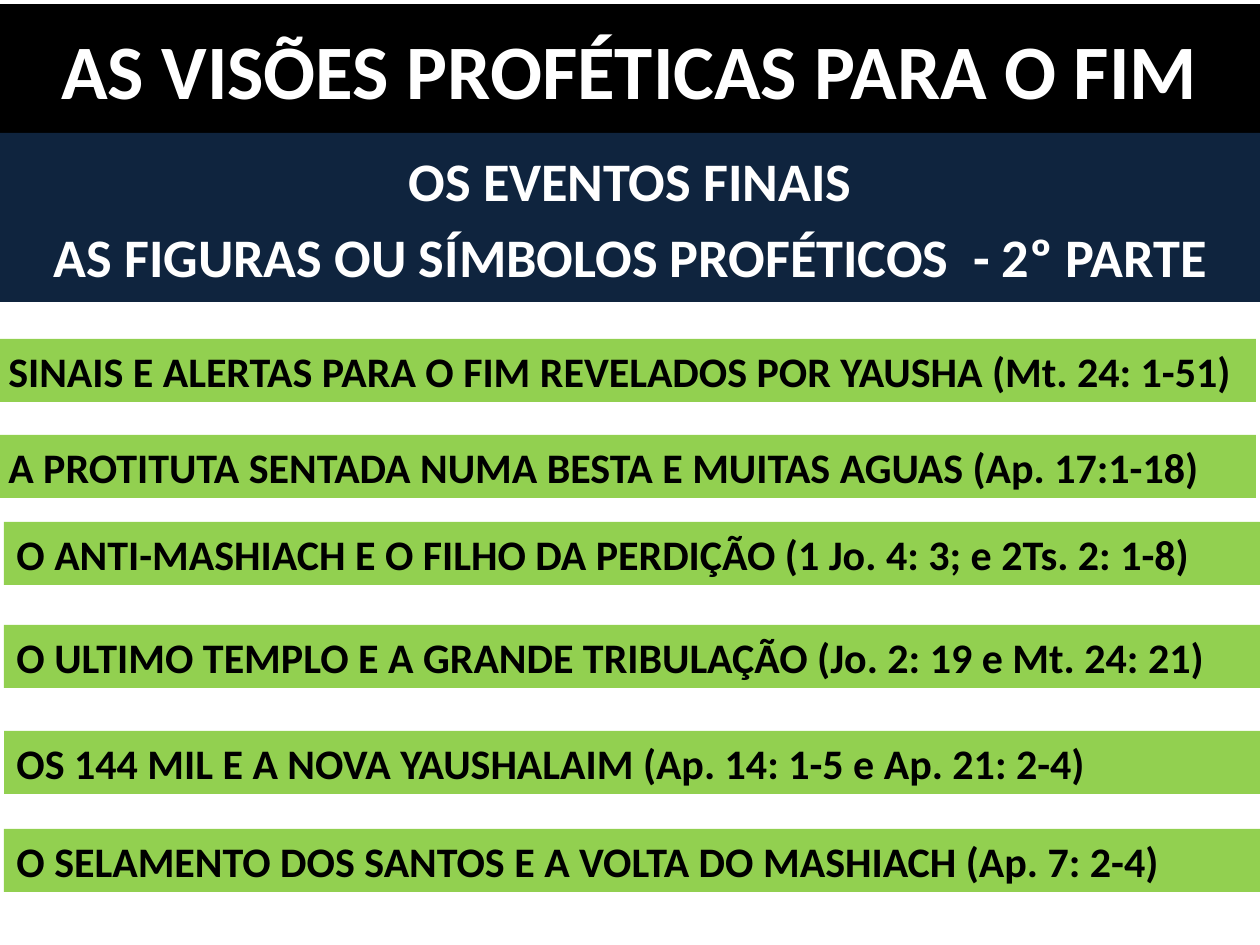
from dataclasses import dataclass

from pptx import Presentation
from pptx import util as u
from pptx.dml.color import RGBColor
from pptx.enum import shapes, text

PX_PER_INCH = 126
FONT = "Calibri"
BLACK = RGBColor(0x00, 0x00, 0x00)
WHITE = RGBColor(0xFF, 0xFF, 0xFF)
NAVY = RGBColor(0x0F, 0x24, 0x3E)
GREEN = RGBColor(0x92, 0xD0, 0x50)

TOPIC_HEIGHT = 63


@dataclass(frozen=True)
class Topic:
    wording: str
    left: int
    top: int
    width: int = 1260
    align: text.PP_ALIGN = text.PP_ALIGN.JUSTIFY


TOPICS = [
    Topic("SINAIS E ALERTAS PARA O FIM REVELADOS POR YAUSHA (Mt. 24: 1-51)",
          -4, 339, align=text.PP_ALIGN.LEFT),
    Topic("A PROTITUTA SENTADA NUMA BESTA E MUITAS AGUAS (Ap. 17:1-18)", -4, 435),
    Topic("O ANTI-MASHIACH E O FILHO DA PERDIÇÃO (1 Jo. 4: 3; e 2Ts. 2: 1-8)", 4, 522),
    Topic("O ULTIMO TEMPLO E A GRANDE TRIBULAÇÃO (Jo. 2: 19 e Mt. 24: 21)", 4, 625),
    Topic("OS 144 MIL E A NOVA YAUSHALAIM (Ap. 14: 1-5 e Ap. 21: 2-4)", 4, 731, 1268),
    Topic("O SELAMENTO DOS SANTOS E A VOLTA DO MASHIACH (Ap. 7: 2-4)", 4, 829, 1261),
]


def px(length: int) -> u.Emu:
    return u.Emu(round(length * u.Inches(1) / PX_PER_INCH))


def place(shape, left: int, top: int, width: int, height: int) -> None:
    shape.left, shape.top = px(left), px(top)
    shape.width, shape.height = px(width), px(height)


def paint(shape, color: RGBColor) -> None:
    shape.fill.solid()
    shape.fill.fore_color.rgb = color


def add_band(slide, left: int, top: int, width: int, height: int, color: RGBColor):
    band = slide.shapes.add_shape(
        shapes.MSO_SHAPE.RECTANGLE, px(left), px(top), px(width), px(height))
    paint(band, color)
    band.line.fill.background()
    band.shadow.inherit = False
    return band


def write(shape, lines: list[str], size: int, color: RGBColor,
          align: text.PP_ALIGN, anchor: text.MSO_ANCHOR,
          fit: text.MSO_AUTO_SIZE = text.MSO_AUTO_SIZE.NONE,
          space_before: int = 0) -> None:
    frame = shape.text_frame
    frame.word_wrap = True
    frame.auto_size = fit
    frame.vertical_anchor = anchor
    for index, line in enumerate(lines):
        paragraph = frame.add_paragraph() if index else frame.paragraphs[0]
        paragraph.alignment = align
        paragraph.space_before = u.Pt(space_before)
        run = paragraph.add_run()
        run.text = line
        run.font.name = FONT
        run.font.size = u.Pt(size)
        run.font.bold = True
        run.font.color.rgb = color


def add_topic(slide, topic: Topic) -> None:
    bar = add_band(slide, topic.left, topic.top, topic.width, TOPIC_HEIGHT, GREEN)
    write(bar, [topic.wording], 24, BLACK, topic.align, text.MSO_ANCHOR.TOP,
          text.MSO_AUTO_SIZE.SHAPE_TO_FIT_TEXT)


def main() -> None:
    deck = Presentation()
    deck.slide_width, deck.slide_height = px(1260), px(945)
    slide = deck.slides.add_slide(deck.slide_layouts.get_by_name("Title Only"))

    # Title
    title = slide.shapes.title
    place(title, 0, 4, 1260, 129)
    paint(title, BLACK)
    write(title, ["AS VISÕES PROFÉTICAS PARA O FIM"], 44, WHITE,
          text.PP_ALIGN.CENTER, text.MSO_ANCHOR.MIDDLE)

    # Subtitle
    subtitle = add_band(slide, 0, 133, 1260, 169, NAVY)
    write(subtitle,
          ["OS EVENTOS FINAIS", "AS FIGURAS OU SÍMBOLOS PROFÉTICOS  - 2º PARTE"],
          31, WHITE, text.PP_ALIGN.CENTER, text.MSO_ANCHOR.MIDDLE, space_before=6)

    # Study topics
    for topic in TOPICS:
        add_topic(slide, topic)

    deck.save("out.pptx")


if __name__ == "__main__":
    main()
